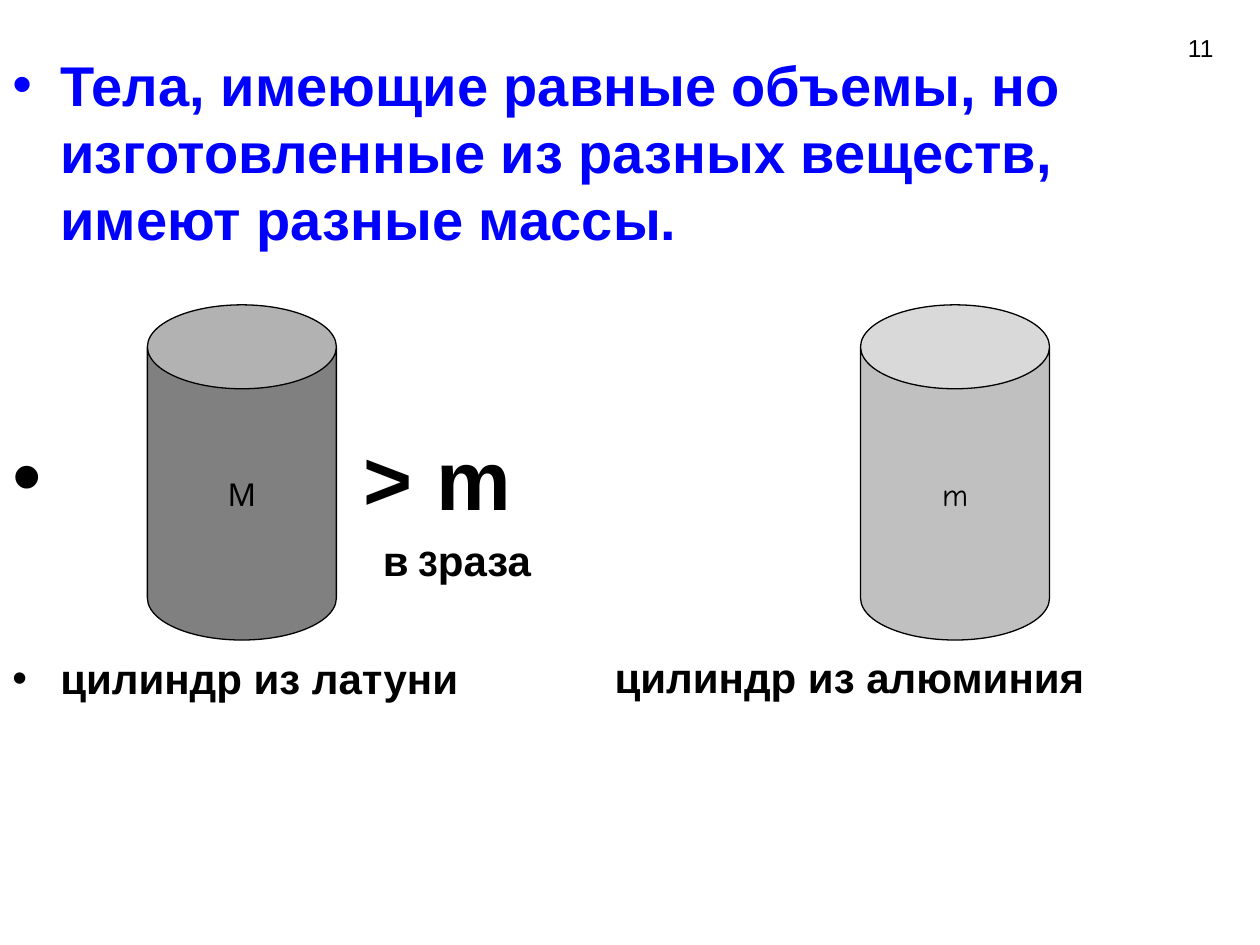
from dataclasses import dataclass

import pptx
import pptx.dml.color
import pptx.enum.shapes
import pptx.enum.text
import pptx.oxml
import pptx.oxml.ns
import pptx.util
from pptx.util import Inches

BLACK = "000000"
BLUE = "0000FF"


@dataclass
class Line:
    runs: list[tuple[str, float]]
    margin: float
    before: float = 0
    spacing: float = 28.8
    bullet: bool = True
    color: str = BLACK


@dataclass
class Cylinder:
    label: str
    left: float
    fill: str


BODY = [
    Line([("Тела, имеющие равные объемы, но изготовленные из разных веществ, "
           "имеют разные массы.", 32)], 0.38, spacing=38.3, color=BLUE),
    Line([("> m", 48)], 2.79, before=100, spacing=57.6),
    Line([("в", 24), (" 3", 20), ("раза", 24)], 2.94, before=4, bullet=False),
    Line([("цилиндр из латуни", 24)], 0.38, before=39),
]
CYLINDERS = [Cylinder("М", 1.17, "808080"), Cylinder("m", 6.83, "C0C0C0")]


def rgb(value: str) -> pptx.dml.color.RGBColor:
    return pptx.dml.color.RGBColor.from_string(value)


def add_text(p, text: str, size: float, color: str = BLACK,
             font: str = "Arial", bold: bool = False) -> None:
    r = p.add_run()
    r.text = text
    r.font.size = pptx.util.Pt(size)
    r.font.name = font
    r.font.bold = bold
    r.font.color.rgb = rgb(color)


def add_box(s, left: float, top: float, width: float, height: float):
    sp = s.shapes.add_textbox(Inches(left), Inches(top), Inches(width), Inches(height))
    sp.text_frame.word_wrap = True
    return sp.text_frame


def write_line(p, line: Line) -> None:
    ppr = p._p.get_or_add_pPr()
    ppr.set("marL", str(Inches(line.margin)))
    if line.bullet:
        ppr.set("indent", str(-Inches(line.margin)))
        for tag, key, value in (("a:buFont", "typeface", "Arial"), ("a:buChar", "char", "•")):
            bullet = pptx.oxml.xmlchemy.OxmlElement(tag)
            bullet.set(key, value)
            ppr.append(bullet)
    p.line_spacing = pptx.util.Pt(line.spacing)
    if line.before:
        p.space_before = pptx.util.Pt(line.before)
    for text, size in line.runs:
        add_text(p, text, size, line.color, bold=True)


def add_cylinder(s, cylinder: Cylinder) -> None:
    sp = s.shapes.add_shape(pptx.enum.shapes.MSO_SHAPE.CAN, Inches(cylinder.left),
                            Inches(2.42), Inches(1.5), Inches(2.66))
    sp.adjustments[0] = 0.444
    sp.shadow.inherit = False
    sp.fill.solid()
    sp.fill.fore_color.rgb = rgb(cylinder.fill)
    sp.line.color.rgb = rgb(BLACK)
    sp.line.width = pptx.util.Pt(0.75)
    tf = sp.text_frame
    tf.word_wrap = False
    tf.vertical_anchor = pptx.enum.text.MSO_ANCHOR.MIDDLE
    p = tf.paragraphs[0]
    p.alignment = pptx.enum.text.PP_ALIGN.CENTER
    add_text(p, cylinder.label, 18, font="Comic Neue")


def main() -> None:
    """Build the slide comparing the masses of two equal cylinders."""
    prs = pptx.Presentation()
    prs.slide_width, prs.slide_height = Inches(10), Inches(7.5)
    s = prs.slides.add_slide(prs.slide_layouts[6])

    tf = add_box(s, 0, 0.35, 9.58, 6.75)
    for i, line in enumerate(BODY):
        write_line(tf.add_paragraph() if i else tf.paragraphs[0], line)
    tf = add_box(s, 4.78, 5.12, 4.8, 0.5)
    write_line(tf.paragraphs[0], Line([("цилиндр из алюминия", 24)], 0, bullet=False))

    for cylinder in CYLINDERS:
        add_cylinder(s, cylinder)

    tf = add_box(s, 9.33, 0.21, 0.81, 0.33)
    add_text(tf.paragraphs[0], "11", 14)
    prs.save("out.pptx")


if __name__ == "__main__":
    main()
